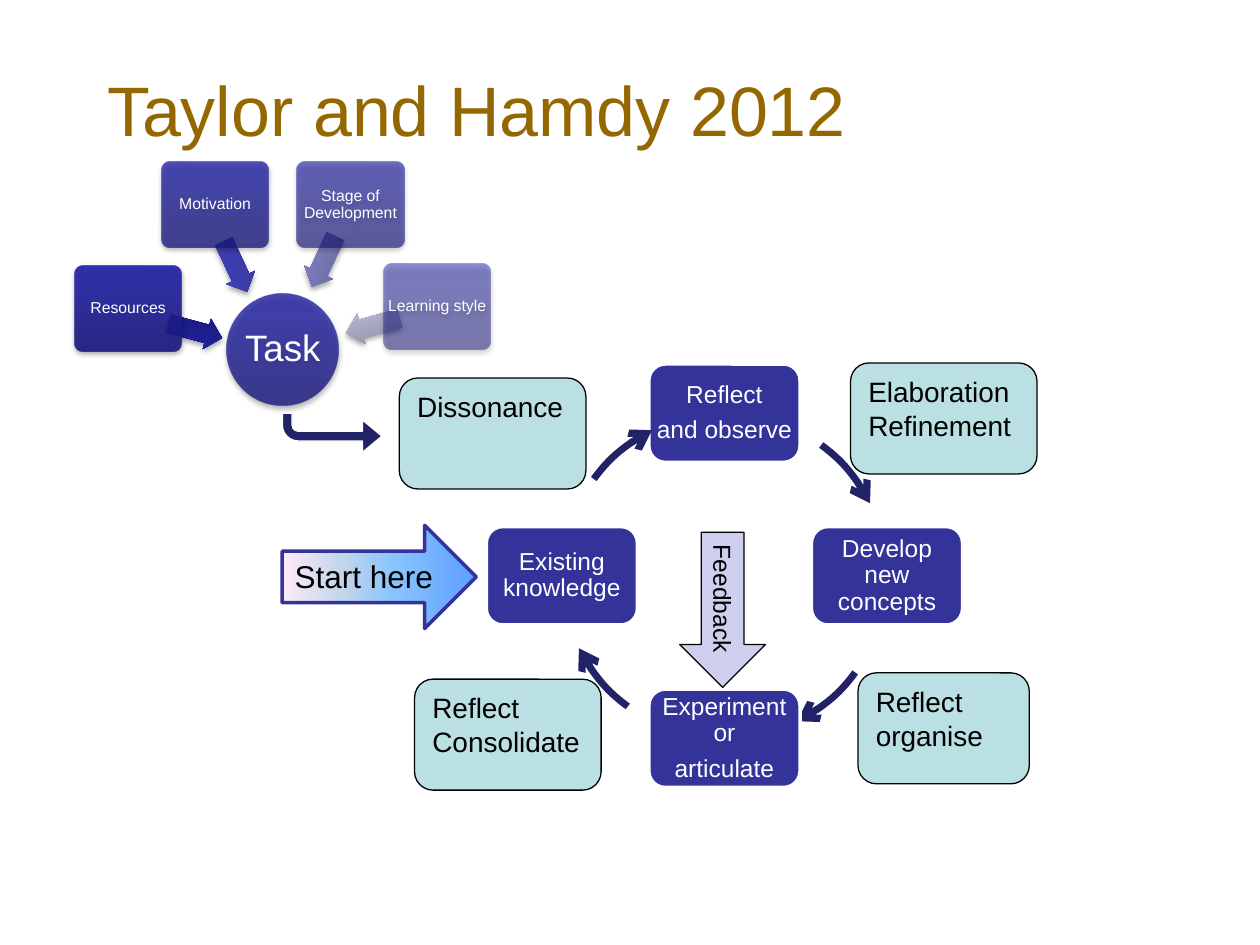
"""Build the Taylor and Hamdy 2012 learning cycle slide."""
from math import cos, radians, sin

from lxml.etree import SubElement
from pptx import Presentation
from pptx.dml.color import RGBColor
from pptx.enum.shapes import MSO_SHAPE as Shape
from pptx.enum.text import MSO_ANCHOR as Anchor, PP_ALIGN as Align
from pptx.oxml.ns import qn
from pptx.util import Pt

TASK_CENTRE = (161.6, 199.8)
TASK_RADIUS = 91.5
CYCLE_CENTRE = (414, 329)
CYCLE_RADIUS = 92.9

CYCLE_STEPS = ["Reflect\nand observe", "Develop new concepts",
               "Experiment or\narticulate", "Existing knowledge"]
NOTES = [("Reflect\norganise", 490.3, 384.5, 97.9),
         ("Reflect\nConsolidate", 236.9, 388.1, 106.6),
         ("Elaboration\nRefinement", 486, 207.4, 106.6),
         ("Dissonance", 228.2, 216, 106.6)]
INFLUENCES = [
    ("Resources", 195, 90, (111.6, 189), ["191978", "21219C", "1F1F9F"]),
    ("Motivation", 245, 77, (134.6, 152.3), ["333392", "4242BE", "4040C1"]),
    ("Stage of Development", 295, 63, (185, 149.4), ["636396", "8080C3", "8080C5"]),
    ("Learning style", 344.5, 50, (213.1, 186.1), ["8C8CA1", "B6B6D1", "B6B6D2"]),
]
TASK_COLOURS = ["1B1B7E", "2323A3", "2020A6"]


def colour(value):
    return RGBColor.from_string(value)


def add_xml(parent, tag, **attributes):
    return SubElement(parent, qn(tag), {key: str(value) for key, value in attributes.items()})


def around(centre, radius, angle):
    return (centre[0] + radius * cos(radians(angle)),
            centre[1] + radius * sin(radians(angle)))


def box_at(centre, width, height):
    return centre[0] - width / 2, centre[1] - height / 2, width, height


class SlideBuilder:
    font_name = "Arial"
    navy = "333399"
    dark_navy = "222267"
    white = "FFFFFF"
    black = "000000"

    def __init__(self, slide):
        self.slide = slide

    def format_text(self, text_frame, size, text_colour):
        for paragraph in text_frame.paragraphs:
            for run in paragraph.runs:
                run.font.name = self.font_name
                run.font.size = Pt(size)
                run.font.color.rgb = colour(text_colour)

    def title(self, text, left, top, width, height):
        shape = self.slide.shapes.title
        shape.left, shape.top, shape.width, shape.height = map(Pt, (left, top, width, height))
        frame = shape.text_frame
        frame.text = text
        frame.vertical_anchor = Anchor.TOP
        frame.margin_top = Pt(7.7)
        frame.paragraphs[0].alignment = Align.LEFT
        self.format_text(frame, 40, "956700")

    def shape(self, kind, box, fill=None, line=None, weight=0.75, rotation=0, adjustments=()):
        shape = self.slide.shapes.add_shape(kind, *map(Pt, box))
        shape.shadow.inherit = False
        shape.rotation = rotation
        for index, value in enumerate(adjustments):
            shape.adjustments[index] = value
        if fill:
            shape.fill.solid()
            shape.fill.fore_color.rgb = colour(fill)
        else:
            shape.fill.background()
        if line:
            shape.line.color.rgb = colour(line)
            shape.line.width = Pt(weight)
        else:
            shape.line.fill.background()
        return shape

    def gradient(self, shape, stops, angle, opacity=100):
        properties = shape._element.spPr
        properties.remove(properties.find(qn("a:noFill")))
        fill = add_xml(properties, "a:gradFill", rotWithShape=1)
        properties.find(qn("a:prstGeom")).addnext(fill)
        stop_list = add_xml(fill, "a:gsLst")
        for position, value in stops:
            stop = add_xml(stop_list, "a:gs", pos=position * 1000)
            add_xml(add_xml(stop, "a:srgbClr", val=value), "a:alpha", val=opacity * 1000)
        add_xml(fill, "a:lin", ang=angle * 60000, scaled=0)

    def glossy(self, kind, box, colours, opacity=100, rotation=0, adjustments=()):
        shape = self.shape(kind, box, rotation=rotation, adjustments=adjustments)
        self.gradient(shape, zip((0, 80, 100), colours), 270, opacity)
        effects = shape._element.spPr.find(qn("a:effectLst"))
        shadow = add_xml(effects, "a:outerShdw", blurRad=Pt(3.1), dist=Pt(1.8),
                         dir=5400000, rotWithShape=0)
        add_xml(add_xml(shadow, "a:srgbClr", val=self.black), "a:alpha", val=35000)
        return shape

    def centred_label(self, shape, text, size, margin=0):
        frame = shape.text_frame
        frame.text = text
        frame.word_wrap = True
        frame.vertical_anchor = Anchor.MIDDLE
        frame.margin_left = frame.margin_right = Pt(margin)
        frame.margin_top = frame.margin_bottom = Pt(margin)
        for paragraph in frame.paragraphs:
            paragraph.alignment = Align.CENTER
            paragraph.line_spacing = 0.9
            paragraph.space_after = Pt(0.35 * size)
        self.format_text(frame, size, self.white)

    def plain_label(self, shape, text, size):
        frame = shape.text_frame
        frame.text = text
        frame.word_wrap = True
        frame.vertical_anchor = Anchor.TOP
        for paragraph in frame.paragraphs:
            paragraph.alignment = Align.LEFT
        self.format_text(frame, size, self.black)

    def cycle_step(self, text, angle):
        centre = around(CYCLE_CENTRE, CYCLE_RADIUS, angle)
        shape = self.shape(Shape.ROUNDED_RECTANGLE, box_at(centre, 86.4, 56.2),
                           self.navy, self.white, 2)
        self.centred_label(shape, text, 14, 1.4)

    def cycle_arrow(self, start, end):
        box = box_at(CYCLE_CENTRE, 2 * CYCLE_RADIUS, 2 * CYCLE_RADIUS)
        shape = self.shape(Shape.ARC, box, line=self.dark_navy, weight=4,
                           adjustments=(start * 0.6, end * 0.6))
        add_xml(shape.line._get_or_add_ln(), "a:tailEnd", type="arrow")

    def note(self, text, left, top, width):
        shape = self.shape(Shape.ROUNDED_RECTANGLE, (left, top, width, 63.4),
                           "BBE0E3", self.black)
        self.plain_label(shape, text, 16)

    def influence(self, text, angle, opacity, arrow_centre, arrow_colours):
        self.glossy(Shape.LEFT_ARROW, box_at(arrow_centre, 31.7, 18), arrow_colours,
                    rotation=angle, adjustments=(0.6, 0.5))
        centre = around(TASK_CENTRE, TASK_RADIUS, angle)
        box = self.glossy(Shape.ROUNDED_RECTANGLE, box_at(centre, 61.2, 49),
                          TASK_COLOURS, opacity, adjustments=(0.1,))
        self.centred_label(box, text, 9)

    def task(self):
        circle = self.glossy(Shape.OVAL, box_at(TASK_CENTRE, 64.1, 64.1), TASK_COLOURS, 80)
        self.centred_label(circle, "Task", 21)

    def feedback_arrow(self):
        shape = self.shape(Shape.RIGHT_ARROW, (368.6, 324, 88.6, 49), "CECEEF",
                           self.black, rotation=90)
        self.plain_label(shape, "Feedback", 14)

    def start_arrow(self):
        shape = self.shape(Shape.RIGHT_ARROW, (161.3, 300.2, 110.9, 59),
                           line=self.navy, weight=2)
        self.gradient(shape, [(0, "5E9EFF"), (40, "85C2FF"), (70, "C4D6EB"),
                              (100, "FFEBFA")], 180)
        self.plain_label(shape, "Start here", 18)

    def bent_arrow(self):
        shape = self.shape(Shape.BENT_ARROW, (161.3, 236.2, 56.9, 22.3), self.dark_navy,
                           self.white, rotation=180, adjustments=(0.25, 0.416, 0.5, 0.411))
        shape._element.spPr.find(qn("a:xfrm")).set("flipH", "1")


def main():
    presentation = Presentation()
    presentation.slide_width, presentation.slide_height = Pt(720), Pt(540)
    builder = SlideBuilder(presentation.slides.add_slide(presentation.slide_layouts[5]))
    builder.title("Taylor and Hamdy 2012", 54, 30.2, 612, 72)
    for index, text in enumerate(CYCLE_STEPS):
        angle = 90 * index - 90
        builder.cycle_step(text, angle)
        builder.cycle_arrow((angle + 36.5) % 360, (angle + 63.5) % 360)
    for note in NOTES:
        builder.note(*note)
    builder.feedback_arrow()
    builder.start_arrow()
    builder.task()
    for influence in INFLUENCES:
        builder.influence(*influence)
    builder.bent_arrow()
    presentation.save("out.pptx")


if __name__ == "__main__":
    main()
